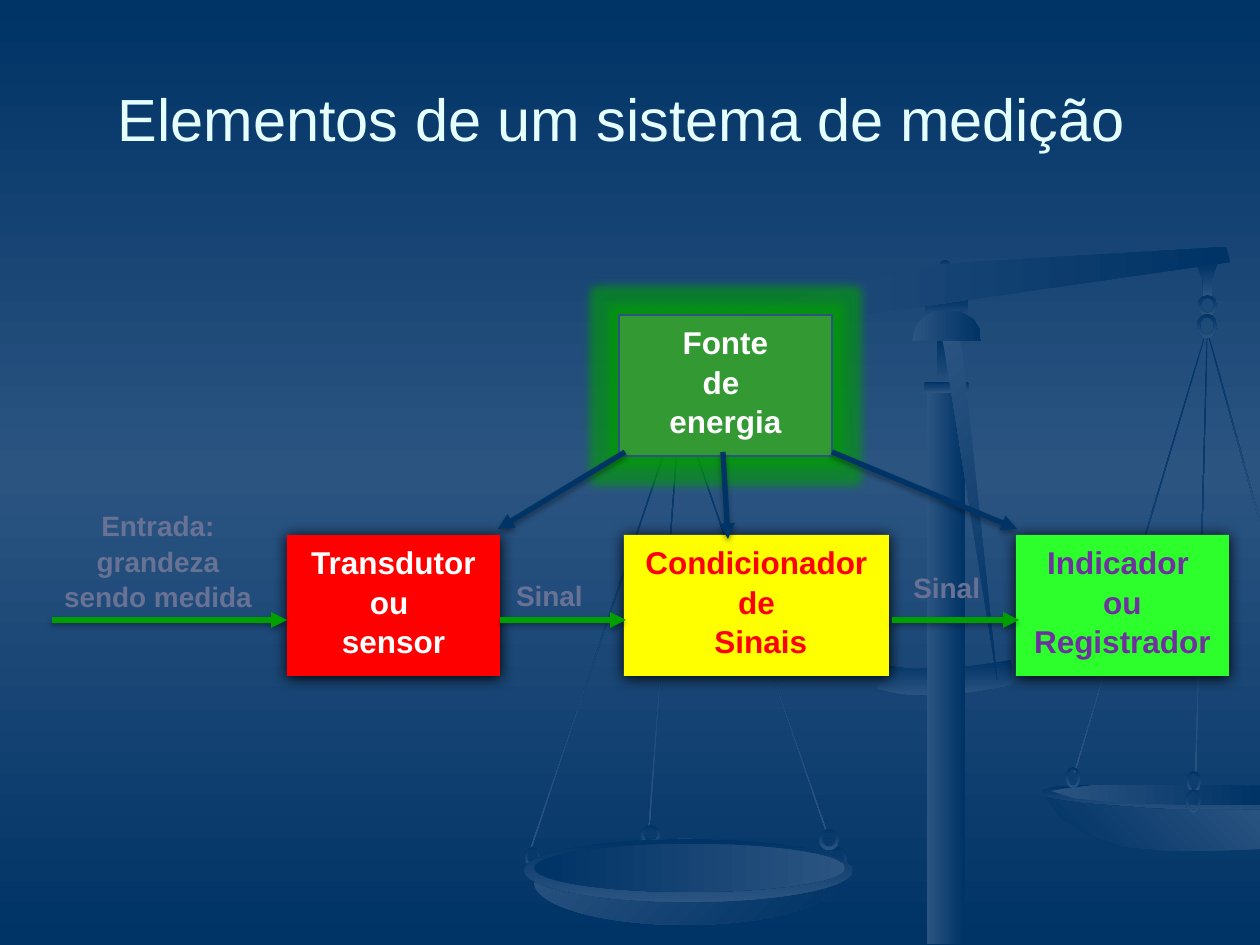
from copy import deepcopy

from lxml import etree
from pptx import Presentation
from pptx.dml.color import RGBColor
from pptx.enum.shapes import MSO_CONNECTOR as Link, MSO_SHAPE as Kind
from pptx.enum.text import MSO_ANCHOR as Anchor, PP_ALIGN as Align
from pptx.oxml.ns import qn
from pptx.util import Emu, Pt

SCALE = 914400 / 126
DARK, PALE = "003366", "2B5481"
GREEN, WHITE, GREY = "009F00", "FFFFFF", "687294"
ROW, TALL = 535, 141

# Scale outlines: points, first colour, last colour, angle
CUP = [(878, 665), (912, 669), (954, 668), (980, 665), (1011, 660),
       (1013, 685), (985, 690), (946, 696), (900, 694), (877, 689)]
RIM = [(1207, 786), (1085, 785), (1053, 787), (1042, 791), (1048, 797), (1074, 804),
       (1106, 807), (1152, 811), (1207, 813), (1260, 813), (1260, 789)]
BOWL = [(1047, 798), (1061, 818), (1090, 836), (1124, 847), (1168, 851), (1206, 851),
        (1260, 849), (1260, 810), (1157, 809), (1080, 803)]
INNER = [(1205, 785), (1097, 785), (1062, 789), (1051, 791), (1074, 798),
         (1125, 803), (1203, 805), (1260, 805), (1260, 786)]
HOOK = [(1218, 263), (1197, 265), (1203, 280), (1203, 297), (1212, 297), (1212, 278)]
BEAM = [(1226, 247), (1230, 262), (662, 344), (660, 333), (929, 267), (956, 263)]
BRACE = [(997, 679), (945, 353), (942, 338), (958, 334), (962, 349)]
DOME = [(948, 311), (961, 312), (973, 319), (979, 328), (981, 341),
        (912, 341), (915, 328), (922, 319), (932, 312)]
ROPES = [(1139, 328, 454, 16.6), (1201, 335, 437, 1.5), (1234, 333, 193, 344.6),
         (753, 397, 445, 341), (604, 398, 464, 18.6), (664, 410, 417, 4.2)]
RINGS = [(1066, 767, 14, 21), (1198, 295, 19, 21), (1197, 314, 20, 24),
         (1187, 771, 14, 21), (1186, 789, 15, 24), (641, 825, 19, 20),
         (827, 847, 20, 24), (525, 847, 15, 20)]


def px(*sizes):
    return [Emu(round(size * SCALE)) for size in sizes]


def rgb(code):
    return RGBColor.from_string(code)


def blend(fill, first, last, angle):
    fill.gradient()
    fill.gradient_angle = (360 - angle) % 360
    for stop, code in zip(fill.gradient_stops, (first, last)):
        stop.color.rgb = rgb(code)


def effect(item, tag, code, alpha, **attrs):
    """Add a shadow or a glow, with lengths in EMU."""
    props = item._element.spPr
    for old in props.findall(qn("a:effectLst")):
        props.remove(old)
    group = etree.SubElement(props, qn("a:effectLst"))
    node = etree.SubElement(group, qn(tag), {k: str(v) for k, v in attrs.items()})
    color = etree.SubElement(node, qn("a:srgbClr"), val=code)
    etree.SubElement(color, qn("a:alpha"), val=str(alpha * 1000))


def shade(item, alpha, blur, dist):
    effect(item, "a:outerShdw", "000000", alpha,
           blurRad=Pt(blur), dist=Pt(dist), dir=5400000)


def part(shapes, kind, box, first=DARK, last=PALE, angle=90, turn=0):
    """Add one preset piece of the scale."""
    item = shapes.add_shape(kind, *px(*box))
    item.rotation = turn
    item.shadow.inherit = False
    item.line.fill.background()
    blend(item.fill, first, last, angle)
    return item


def shell(shapes, points, first=DARK, last=PALE, angle=90):
    """Add one outlined piece of the scale."""
    pen = shapes.build_freeform(*points[0], scale=SCALE)
    pen.add_line_segments(points[1:], close=True)
    item = pen.convert_to_shape()
    item.shadow.inherit = False
    item.line.fill.background()
    blend(item.fill, first, last, angle)


def write(item, text, size, code, align=Align.CENTER, bold=True, space=1.05):
    frame = item.text_frame
    frame.word_wrap = True
    frame.vertical_anchor = Anchor.TOP
    frame.text = text
    for para in frame.paragraphs:
        para.alignment = align
        para.line_spacing = space
        font = para.font
        font.name, font.size, font.bold = "Arial", Pt(size), bold
        font.color.rgb = rgb(code)
    return frame


def label(shapes, box, text, align=Align.CENTER):
    write(shapes.add_textbox(*px(*box)), text, 16, GREY, align)


def block(shapes, x, y, wide, text, back, code):
    item = shapes.add_shape(Kind.RECTANGLE, *px(x, y, wide, TALL))
    item.fill.solid()
    item.fill.fore_color.rgb = rgb(back)
    item.line.fill.background()
    shade(item, 100, 8.5, 1)
    write(item, text, 18, code)
    return item


def arrow(shapes, ends, code):
    item = shapes.add_connector(Link.STRAIGHT, *px(*ends))
    item.line.color.rgb = rgb(code)
    item.line.width = Pt(3)
    etree.SubElement(item.line._get_or_add_ln(), qn("a:tailEnd"), type="triangle")
    shade(item, 35, 3.1, 1.8)


def backdrop(slide):
    fill = slide.background.fill
    blend(fill, DARK, PALE, 90)
    first, mid = slide._element.xpath(".//p:bg//a:gs")
    mid.set("pos", "50000")
    last = deepcopy(first)
    last.set("pos", "100000")
    mid.addnext(last)


def scale(shapes):
    part(shapes, Kind.RECTANGLE, (925, 299, 43, 23))
    part(shapes, Kind.OVAL, (940, 260, 10, 10))
    for x, y, tall, turn in ROPES:
        part(shapes, Kind.RECTANGLE, (x, y, 1, tall), turn=turn)
    # Right pan and beam
    shell(shapes, CUP)
    shell(shapes, RIM)
    shell(shapes, BOWL, angle=315)
    shell(shapes, INNER, PALE, DARK, 0)
    shell(shapes, HOOK)
    shell(shapes, BEAM, PALE, DARK, 0)
    for box in RINGS:
        part(shapes, Kind.DONUT, box).adjustments[0] = 0.15
    # Left pan
    part(shapes, Kind.OVAL, (534, 839, 302, 86), PALE, DARK, 45)
    part(shapes, Kind.OVAL, (524, 839, 329, 63))
    part(shapes, Kind.OVAL, (534, 844, 311, 48), angle=0)
    part(shapes, Kind.DONUT, (819, 829, 20, 21)).adjustments[0] = 0.15
    # Column
    part(shapes, Kind.RECTANGLE, (927, 388, 38, 556), PALE, DARK, 0)
    part(shapes, Kind.RECTANGLE, (937, 338, 16, 53))
    part(shapes, Kind.ROUNDED_RECTANGLE, (924, 382, 45, 11))
    shell(shapes, BRACE, PALE, DARK, 45)
    shell(shapes, DOME, PALE, DARK, 0)


def main():
    deck = Presentation()
    deck.slide_width, deck.slide_height = px(1260, 945)
    slide = deck.slides.add_slide(deck.slide_layouts[6])
    shapes = slide.shapes
    backdrop(slide)
    scale(shapes)

    # Title, raised above the middle of its box
    title = shapes.add_textbox(*px(63, 73, 1134, 158))
    frame = write(title, "Elementos de um sistema de medição ", 34, "E5FFFF",
                  bold=False, space=1)
    frame.vertical_anchor = Anchor.MIDDLE
    frame.margin_bottom = px(74)[0]

    # Signal chain
    label(shapes, (28, 501, 260, 136), "Entrada:\ngrandeza\nsendo medida")
    label(shapes, (901, 563, 118, 57), "Sinal", Align.LEFT)
    label(shapes, (486, 571, 127, 57), "Sinal")
    block(shapes, 287, ROW, 213, "Transdutor\nou \nsensor", "FF0000", WHITE)
    block(shapes, 1016, ROW, 213, "Indicador  ou Registrador", "2CFF2C", "7030A0")
    block(shapes, 624, ROW, 265, "Condicionador de\n Sinais", "FFFF00", "FF0000")
    for start, end in ((52, 287), (500, 626), (892, 1019)):
        arrow(shapes, (start, 620, end, 620), GREEN)

    # Power source
    power = block(shapes, 619, 315, 213, "Fonte\nde \nenergia", "339933", WHITE)
    power.line.color.rgb = rgb(PALE)
    power.line.width = Pt(1.5)
    effect(power, "a:glow", GREEN, 60, rad=Pt(11))
    for ends in ((625, 452, 498, 529), (723, 452, 728, 539), (832, 452, 1017, 529)):
        arrow(shapes, ends, DARK)

    deck.save("out.pptx")


if __name__ == "__main__":
    main()
